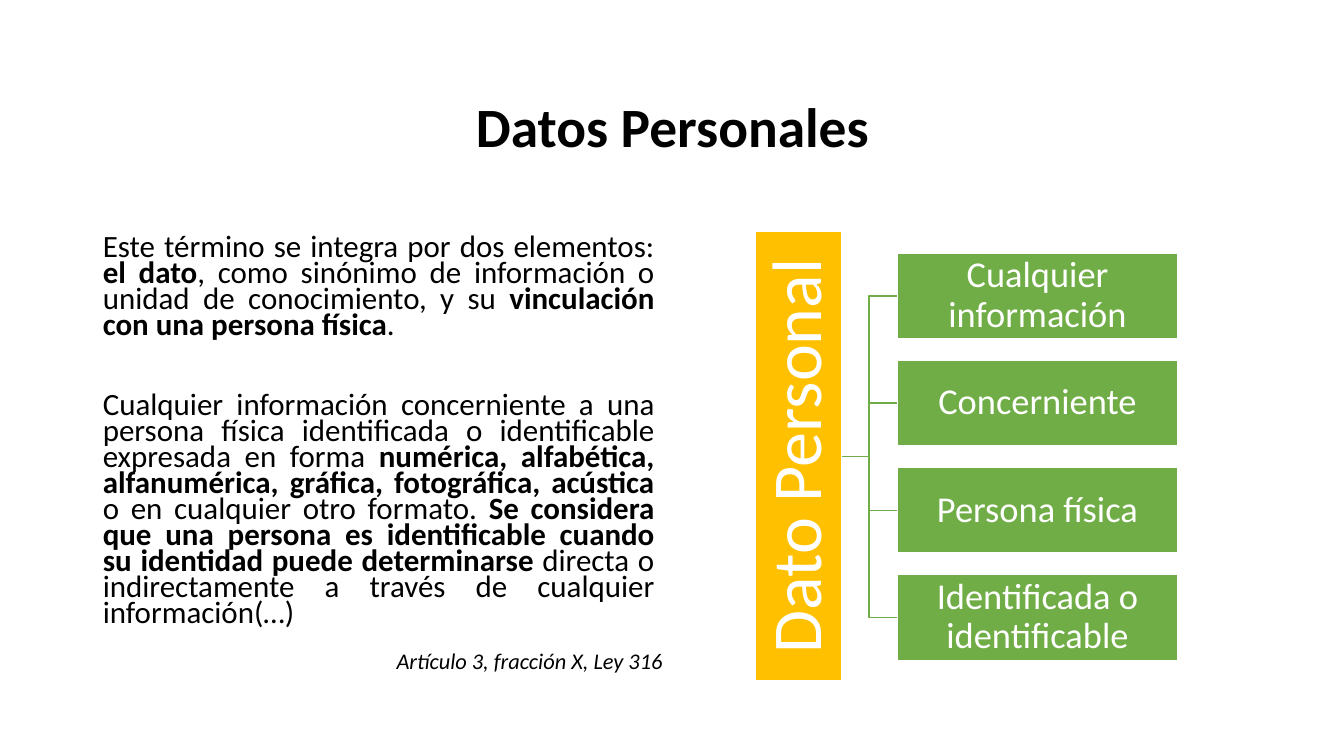
from dataclasses import dataclass

from lxml.etree import SubElement
from pptx import Presentation
from pptx.dml.color import RGBColor as Rgb
from pptx.enum.shapes import MSO_SHAPE as Shape
from pptx.enum.text import MSO_ANCHOR as Anchor, MSO_AUTO_SIZE as Fit, PP_ALIGN as Align
from pptx.oxml.ns import qn
from pptx.util import Inches, Pt

HUES = {"ink": "000000", "white": "FFFFFF", "gold": "FFC000", "green": "70AD47"}
WIDE, HIGH = Inches(13.33), Inches(7.5)


@dataclass
class Area:
    """Percent shares of the slide's width and height."""
    left: float
    top: float
    width: float
    height: float

    def place(self) -> tuple[int, int, int, int]:
        return (share(self.left, WIDE), share(self.top, HIGH),
                share(self.width, WIDE), share(self.height, HIGH))


@dataclass
class Block:
    text: str
    area: Area
    hue: str
    size: float
    inset: float
    turn: int = 0


@dataclass
class Para:
    before: float
    runs: list[tuple[str, bool]]


def share(part: float, whole: int) -> int:
    return round(part * whole / 100)


def style(para, size: float, hue: str, align, lead: float = 1.0) -> None:
    para.alignment = align
    para.line_spacing = lead
    para.font.name = "Calibri"
    para.font.size = Pt(size)
    para.font.color.rgb = Rgb.from_string(HUES[hue])


def put(item, area: Area) -> None:
    item.left, item.top, item.width, item.height = area.place()


def draw_block(slide, block: Block) -> None:
    rect = slide.shapes.add_shape(Shape.RECTANGLE, *block.area.place())
    rect.rotation = block.turn
    rect.shadow.inherit = False
    rect.fill.solid()
    rect.fill.fore_color.rgb = Rgb.from_string(HUES[block.hue])
    rect.line.color.rgb = Rgb.from_string(HUES["white"])
    rect.line.width = Pt(1)
    frame = rect.text_frame
    frame.word_wrap = True
    frame.vertical_anchor = Anchor.MIDDLE
    edge = Inches(block.inset)
    frame.margin_left = frame.margin_right = edge
    frame.margin_top = frame.margin_bottom = edge
    frame.text = block.text
    style(frame.paragraphs[0], block.size, "white", Align.CENTER, 0.9)


def draw_branch(slide, start: float, bend: float, end: float, root: float, leaf: float) -> None:
    spots = [(share(x, WIDE), share(y, HIGH))
             for x, y in ((bend, root), (bend, leaf), (end, leaf))]
    pen = slide.shapes.build_freeform(share(start, WIDE), share(root, HIGH))
    pen.add_line_segments(spots, close=False)
    line = pen.convert_to_shape()
    line.shadow.inherit = False
    line.fill.background()
    line.line.color.rgb = Rgb.from_string(HUES["green"])
    line.line.width = Pt(1)


def fill_body(body, paras: list[Para]) -> None:
    frame = body.text_frame
    frame.auto_size = Fit.NONE
    for i, item in enumerate(paras):
        para = frame.paragraphs[0] if i == 0 else frame.add_paragraph()
        props = para._p.get_or_add_pPr()
        props.set("marL", "0")
        props.set("indent", "0")
        SubElement(props, qn("a:buNone"))
        style(para, 22.1, "ink", Align.JUSTIFY, 0.7)
        para.space_before = Pt(item.before)
        for text, bold in item.runs:
            run = para.add_run()
            run.text = text
            run.font.bold = bold


PARAS = [
    Para(0, [
        ("Este término se integra por dos elementos: ", False),
        ("el dato", True),
        (", como sinónimo de información o unidad de conocimiento, y su", False),
        (" vinculación con una persona física", True),
        (".", False),
    ]),
    Para(38.6, [
        ("Cualquier información concerniente a una persona física identificada "
         "o identificable expresada en forma ", False),
        ("numérica, alfabética, alfanumérica, gráfica, fotográfica, acústica", True),
        (" o en cualquier otro formato. ", False),
        ("Se considera que una persona es identificable cuando su identidad "
         "puede determinarse ", True),
        ("directa o indirectamente a través de cualquier información(…)", False),
    ]),
]
PARTS = ["Cualquier información", "Concerniente", "Persona física",
         "Identificada o identificable"]


def main() -> None:
    deck = Presentation()
    deck.slide_width, deck.slide_height = WIDE, HIGH
    slide = deck.slides.add_slide(deck.slide_layouts[1])

    title, body = slide.placeholders
    put(title, Area(6.9, 15.73, 86.27, 11.6))
    title.text_frame.auto_size = Fit.NONE
    title.text_frame.vertical_anchor = Anchor.MIDDLE
    title.text_frame.text = "Datos Personales\v"
    head = title.text_frame.paragraphs[0]
    style(head, 39.6, "ink", Align.CENTER, 0.9)
    head.font.bold = True

    put(body, Area(6.9, 30.67, 42.54, 59.47))
    fill_body(body, PARAS)

    cite = slide.shapes.add_textbox(*Area(25.43, 84.93, 24.61, 4.93).place())
    cite.text_frame.word_wrap = True
    cite.text_frame.auto_size = Fit.SHAPE_TO_FIT_TEXT
    cite.text_frame.text = "Artículo 3, fracción X, Ley 316"
    note = cite.text_frame.paragraphs[0]
    style(note, 16, "ink", Align.RIGHT)
    note.font.italic = True

    left, top, width, height, step = 66.77, 33.47, 20.86, 11.33, 14.18
    tops = [top + i * step for i in range(len(PARTS))]
    for y in tops:
        draw_branch(slide, 62.57, 64.67, left, 60.4, y + height / 2)
    bar = Area(42.69, 54.67, 33.46, height)
    draw_block(slide, Block("Dato Personal", bar, "gold", 50, 0.03, 270))
    for text, y in zip(PARTS, tops):
        draw_block(slide, Block(text, Area(left, y, width, height), "green", 26, 0.02))

    deck.save("out.pptx")


if __name__ == "__main__":
    main()
